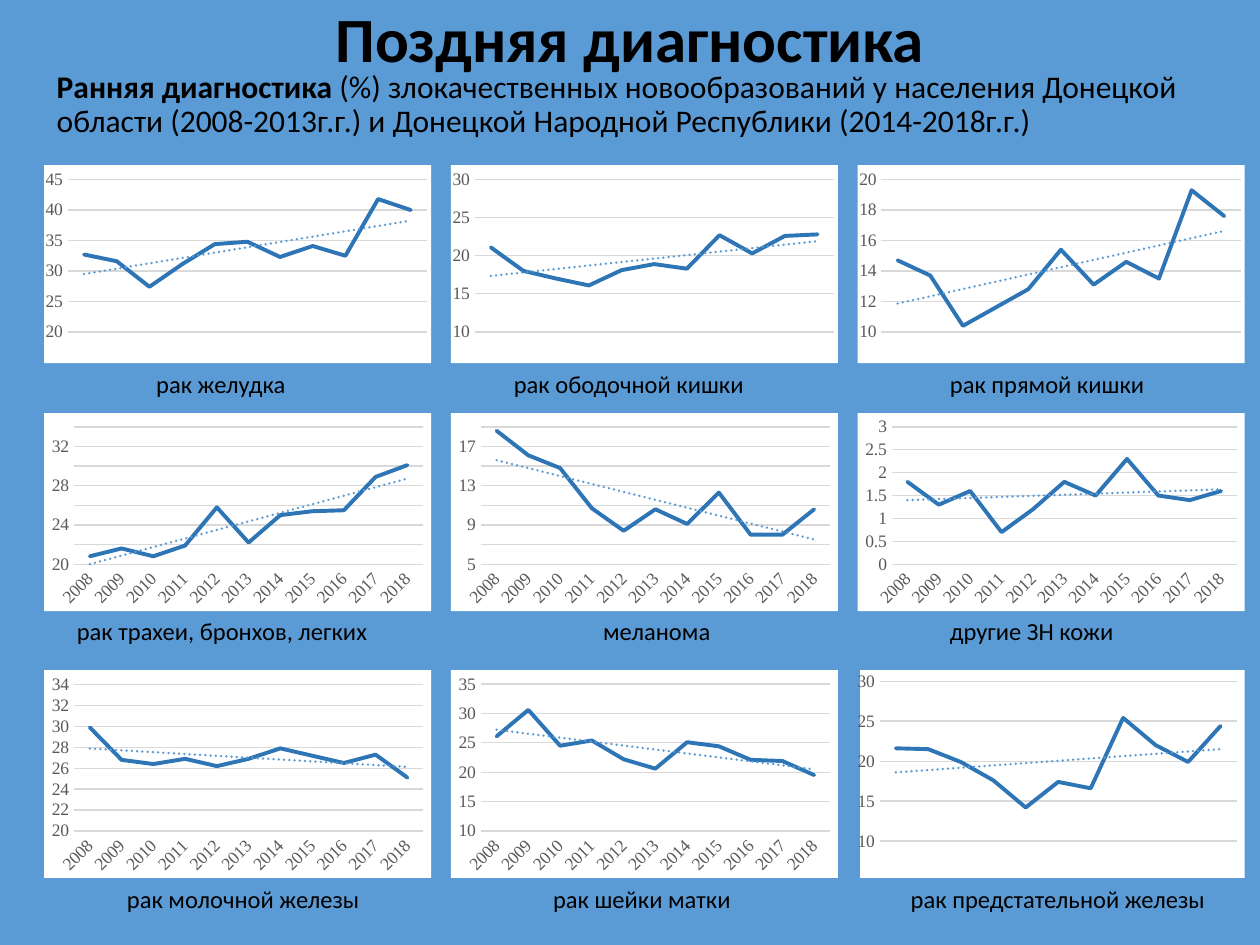
from lxml import etree
from pptx import Presentation, util as u
from pptx.chart import data
from pptx.dml import color
from pptx.enum import chart as ch, text
from pptx.oxml import parse_xml
from pptx.oxml import ns

COLORS = {"back": "5B9BD5", "ink": "000000", "panel": "FFFFFF", "label": "595959",
          "grid": "D9D9D9", "rate": "2E75B6", "trend": "5B9BD5"}
FONTS = {
    "heading": {"name": "Calibri", "size": u.Pt(36), "bold": True},
    "lead": {"name": "Calibri", "size": u.Pt(18), "bold": True},
    "intro": {"name": "Calibri", "size": u.Pt(18), "bold": False},
    "caption": {"name": "Calibri", "size": u.Pt(14)},
    "chart": {"name": "Calibri", "size": u.Pt(10)},
    "axis": {"name": "Times New Roman", "size": u.Pt(10)},
}
FRAME = {"word_wrap": True, "auto_size": text.MSO_AUTO_SIZE.NONE,
         "vertical_anchor": text.MSO_ANCHOR.MIDDLE}
XMLNS = ns.nsdecls("c", "a")
TREND = f"""<c:trendline {XMLNS}><c:spPr><a:ln w="19050" cap="rnd"><a:solidFill>
<a:srgbClr val="{COLORS['trend']}"/></a:solidFill><a:prstDash val="sysDot"/></a:ln></c:spPr>
<c:trendlineType val="linear"/><c:dispRSqr val="0"/><c:dispEq val="0"/></c:trendline>"""
PANEL = f"""<c:spPr {XMLNS}><a:solidFill><a:srgbClr val="{COLORS['panel']}"/></a:solidFill>
<a:ln><a:noFill/></a:ln></c:spPr>"""

YEARS = [str(year) for year in range(2008, 2019)]
LEFT, STEP, WIDTH = 0.89, 8.2, 7.8
ROWS = [(3.33, 3.99, 6.93), (8.33, 3.99, 11.91), (13.51, 4.19, 17.32)]
TOP_PLOT = (0.061, 0.073, 0.929, 0.77)
LAST_PLOT = (0.051, 0.053, 0.929, 0.77)
CANCERS = [
    ("рак желудка", 2.9, 6.2, (20, 45, 5), TOP_PLOT,
     [32.7, 31.6, 27.4, 31.1, 34.4, 34.8, 32.3, 34.1, 32.5, 41.8, 40]),
    ("рак ободочной кишки", 10.11, 6.2, (10, 30, 5), TOP_PLOT,
     [21.1, 18, 17, 16.1, 18.1, 18.9, 18.3, 22.7, 20.3, 22.6, 22.8]),
    ("рак прямой кишки", 18.9, 6.2, (10, 20, 2), TOP_PLOT,
     [14.7, 13.7, 10.4, 11.6, 12.8, 15.4, 13.1, 14.6, 13.5, 19.3, 17.6]),
    ("рак трахеи, бронхов, легких", 1.3, 7.2, (20, 35, 2), None,
     [20.8, 21.6, 20.8, 21.9, 25.8, 22.2, 25, 25.4, 25.5, 28.9, 30.1]),
    ("меланома", 11.91, 6.2, (5, 20, 2), None,
     [18.6, 16.1, 14.8, 10.7, 8.4, 10.6, 9.1, 12.3, 8, 8, 10.6]),
    ("другие ЗН кожи", 18.9, 6.2, (0, 3, 0.5), None,
     [1.8, 1.3, 1.6, 0.7, 1.2, 1.8, 1.5, 2.3, 1.5, 1.4, 1.6]),
    ("рак молочной железы", 2.31, 7.2, (20, 35, 2), None,
     [29.9, 26.8, 26.4, 26.9, 26.2, 26.9, 27.9, 27.2, 26.5, 27.3, 25.1]),
    ("рак шейки матки", 10.9, 6.2, (10, 35, 5), None,
     [26.1, 30.6, 24.5, 25.4, 22.2, 20.6, 25.1, 24.4, 22.1, 21.9, 19.5]),
    ("рак предстательной железы", 18.11, 6.6, (10, 30, 5), LAST_PLOT,
     [21.6, 21.5, 19.9, 17.6, 14.2, 17.4, 16.6, 25.4, 22, 19.9, 24.4]),
]


def style(font, kind, ink="ink"):
    for key, value in FONTS[kind].items():
        setattr(font, key, value)
    font.color.rgb = color.RGBColor.from_string(COLORS[ink])


def write(box, runs, align=text.PP_ALIGN.LEFT):
    for key, value in FRAME.items():
        setattr(box.text_frame, key, value)
    paragraph = box.text_frame.paragraphs[0]
    paragraph.alignment = align
    for words, kind in runs:
        run = paragraph.add_run()
        run.text = words
        style(run.font, kind)
    return paragraph


deck = Presentation()
deck.slide_width, deck.slide_height = u.Cm(25.4), u.Cm(19.05)
slide = deck.slides.add_slide(deck.slide_layouts[5])
slide.background.fill.solid()
slide.background.fill.fore_color.rgb = color.RGBColor.from_string(COLORS["back"])

intro = slide.shapes.title
for side, length in {"left": 0.89, "top": 0.53, "width": 23.8, "height": 3.18}.items():
    setattr(intro, side, u.Cm(length))
write(intro, [
    ("Ранняя диагностика", "lead"),
    (" (%) злокачественных новообразований у населения Донецкой области "
     "(2008-2013г.г.) и Донецкой Народной Республики (2014-2018г.г.)", "intro"),
]).line_spacing = 0.9

for index, (cancer, caption_left, caption_width, scale, plot_box, rates) in enumerate(CANCERS):
    row, column = divmod(index, 3)
    top, height, caption_top = ROWS[row]

    caption = slide.shapes.add_textbox(u.Cm(caption_left), u.Cm(caption_top),
                                       u.Cm(caption_width), u.Cm(1.6))
    write(caption, [(cancer, "caption")])

    figures = data.CategoryChartData()
    figures.categories = YEARS
    figures.add_series(cancer, rates)
    chart = slide.shapes.add_chart(ch.XL_CHART_TYPE.LINE, u.Cm(LEFT + column * STEP), u.Cm(top),
                                   u.Cm(WIDTH), u.Cm(height), figures).chart
    chart.has_title = chart.has_legend = False
    style(chart.font, "chart")
    chart.plots[0].vary_by_categories = False

    years, percent = chart.category_axis, chart.value_axis
    for axis in (years, percent):
        axis.major_tick_mark = axis.minor_tick_mark = ch.XL_TICK_MARK.NONE
        style(axis.tick_labels.font, "axis", "label")
    percent.minimum_scale, percent.maximum_scale, percent.major_unit = scale
    percent.format.line.fill.background()

    rate = chart.plots[0].series[0]
    rate.smooth = False
    rate.marker.style = ch.XL_MARKER_STYLE.NONE
    for line, ink, weight in ((years.format.line, "grid", 0.75),
                              (percent.major_gridlines.format.line, "grid", 0.75),
                              (rate.format.line, "rate", 2.25)):
        line.color.rgb = color.RGBColor.from_string(COLORS[ink])
        line.width = u.Pt(weight)
    rate._element.xpath("c:spPr/a:ln")[0].set("cap", "rnd")
    rate._element.xpath("c:cat")[0].addprevious(parse_xml(TREND))
    chart._chartSpace.xpath("c:chart")[0].addnext(parse_xml(PANEL))

    if plot_box:
        years.tick_label_position = ch.XL_TICK_LABEL_POSITION.NONE
        area = chart._chartSpace.xpath("c:chart/c:plotArea")[0]
        for unset in area.xpath("c:layout"):
            area.remove(unset)
        layout = parse_xml(f"<c:layout {XMLNS}><c:manualLayout/></c:layout>")
        settings = [("layoutTarget", "inner"), ("xMode", "edge"), ("yMode", "edge"),
                    *zip("xywh", plot_box)]
        for tag, value in settings:
            etree.SubElement(layout[0], ns.qn(f"c:{tag}")).set("val", str(value))
        area.insert(0, layout)
    else:
        years._element.xpath("c:txPr/a:bodyPr")[0].set("rot", "-2700000")

heading = slide.shapes.add_textbox(u.Cm(1.27), u.Cm(-0.43), u.Cm(22.86), u.Cm(2.36))
write(heading, [("Поздняя диагностика", "heading")], text.PP_ALIGN.CENTER)

deck.save("out.pptx")
